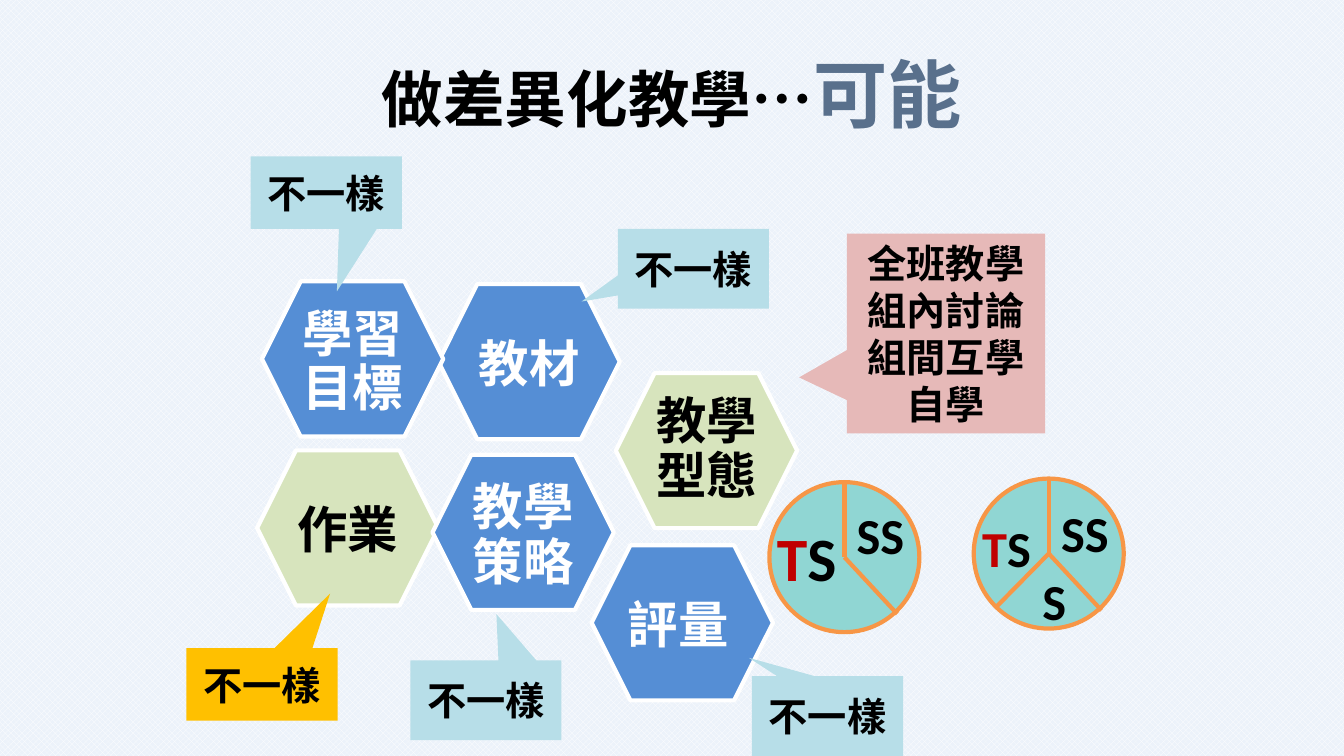
from dataclasses import dataclass

from lxml.etree import SubElement
from pptx import Presentation
from pptx.dml.color import RGBColor
from pptx.enum.dml import MSO_PATTERN
from pptx.enum.shapes import MSO_CONNECTOR, MSO_SHAPE
from pptx.enum.text import MSO_ANCHOR, MSO_AUTO_SIZE, PP_ALIGN
from pptx.oxml.ns import qn
from pptx.util import Cm, Pt

CJK = "Noto Sans CJK SC"
LATIN = "Calibri"
COLORS = {
    "white": "FFFFFF", "black": "000000", "backdrop": "ECF2FA", "slate": "59708C",
    "blue": "558ED5", "green": "D7E4BD", "pink": "E6B9B8", "sky": "B7DEE8",
    "amber": "FFC000", "teal": "90D6D3", "orange": "F79646", "red": "C00000",
}
SLIDE_W, SLIDE_H = 33.87, 19.05
HEX_W, HEX_H = 4.57, 3.91
PIE_R = 1.89


@dataclass
class Hexagon:
    text: str
    x: float
    y: float
    fill: str = "blue"
    color: str = "white"
    dx: float = 0.71
    dy: float = 0.71


@dataclass
class Callout:
    x: float
    y: float
    h: float
    tail: tuple[float, float]
    fill: str = "sky"
    w: float = 3.81
    text: str = "不一樣"


@dataclass
class Label:
    """Pie label, placed relative to the centre of the pie."""
    runs: list[tuple[str, str]]
    dx: float
    dy: float
    w: float = 1.73
    h: float = 1.8
    size: int = 36


@dataclass
class Pie:
    cx: float
    cy: float
    spokes: list[tuple[float, float]]
    labels: list[Label]


TEACHER = [("T", "red"), ("S", "black")]
STUDENTS = [("SS", "black")]

HEXAGONS = [
    Hexagon("教材", 11.05, 7.16),
    Hexagon("作業", 6.48, 11.35, "green", "black"),
    Hexagon("教學策略", 10.9, 11.46),
    Hexagon("學習目標", 6.6, 7.09),
    Hexagon("教學型態", 15.52, 9.4, "green", "black", dy=0.61),
    Hexagon("評量", 14.91, 13.74, dx=0.61),
]
CALLOUTS = [
    Callout(21.34, 5.89, 5.03, (-0.74, 0.22), "pink", 5.0,
            "全班教學\n組內討論\n組間互學\n自學"),
    Callout(15.57, 5.77, 2.01, (-0.74, 0.41)),
    Callout(4.7, 16.33, 1.83, (0.45, -1.25), "amber"),
    Callout(6.32, 3.94, 1.83, (0.07, 1.36)),
    Callout(10.34, 16.64, 2.01, (0.07, -1.08)),
    Callout(18.95, 17.04, 2.01, (-0.52, -0.73)),
]
PIES = [
    Pie(21.28, 14.04, [(0, -PIE_R), (1.33, 1.43)],
        [Label(TEACHER, -1.95, -1.07, 2.01, 2.13, 44),
         Label(STUDENTS, 0.06, -1.45)]),
    Pie(26.43, 13.95, [(0, -PIE_R), (1.33, 1.43), (-1.33, 1.35)],
        [Label(TEACHER, -1.93, -1.04),
         Label(STUDENTS, 0.06, -1.43),
         Label([("S", "black")], -0.41, 0.28, 1.12)]),
]


def rgb(name: str) -> RGBColor:
    return RGBColor.from_string(COLORS[name])


def add_text(p, text: str, *, size: float, color: str = "black", font: str = CJK) -> None:
    r = p.add_run()
    r.text = text
    f = r.font
    f.size, f.bold, f.name = Pt(size), True, font
    f.color.rgb = rgb(color)
    SubElement(r._r.get_or_add_rPr(), qn("a:ea")).set("typeface", font)


def add_shape(shapes, kind, x: float, y: float, w: float, h: float,
              fill: str, line: str | None = None):
    s = shapes.add_shape(kind, Cm(x), Cm(y), Cm(w), Cm(h))
    s.shadow.inherit = False
    s.fill.solid()
    s.fill.fore_color.rgb = rgb(fill)
    if line:
        s.line.color.rgb = rgb(line)
        s.line.width = Pt(3)
    else:
        s.line.fill.background()
    return s


def add_box(shapes, x: float, y: float, w: float, h: float, wrap: bool = True):
    tf = shapes.add_textbox(Cm(x), Cm(y), Cm(w), Cm(h)).text_frame
    tf.word_wrap = wrap
    if wrap:
        tf.vertical_anchor = MSO_ANCHOR.MIDDLE
        tf.paragraphs[0].alignment = PP_ALIGN.CENTER
    else:
        tf.auto_size = MSO_AUTO_SIZE.SHAPE_TO_FIT_TEXT
    return tf


def draw_backdrop(shapes) -> None:
    s = add_shape(shapes, MSO_SHAPE.RECTANGLE, 0, 0, SLIDE_W, SLIDE_H, "backdrop")
    s.fill.patterned()
    s.fill.pattern = MSO_PATTERN.SOLID_DIAMOND
    s.fill.fore_color.rgb = rgb("white")
    s.fill.back_color.rgb = rgb("backdrop")


def draw_title(shapes) -> None:
    p = add_box(shapes, 4.23, 0.74, 25.4, 3.18).paragraphs[0]
    add_text(p, "做差異化教學…", size=44)
    add_text(p, "可能", size=53, color="slate")


def draw_hexagon(shapes, hexagon: Hexagon) -> None:
    add_shape(shapes, MSO_SHAPE.HEXAGON, hexagon.x, hexagon.y, HEX_W, HEX_H,
              hexagon.fill, "white")
    tf = add_box(shapes, hexagon.x + hexagon.dx, hexagon.y + hexagon.dy, 3.15, 2.7)
    tf.margin_left = tf.margin_right = 0
    tf.margin_top = tf.margin_bottom = Cm(0.1)
    p = tf.paragraphs[0]
    p.line_spacing = 0.9
    p.space_after = Pt(12.6)
    add_text(p, hexagon.text, size=36, color=hexagon.color)


def draw_callout(shapes, callout: Callout) -> None:
    s = add_shape(shapes, MSO_SHAPE.RECTANGULAR_CALLOUT, callout.x, callout.y,
                  callout.w, callout.h, callout.fill)
    s.adjustments[0], s.adjustments[1] = callout.tail
    tf = s.text_frame
    tf.word_wrap = True
    tf.vertical_anchor = MSO_ANCHOR.MIDDLE
    for i, text in enumerate(callout.text.split("\n")):
        p = tf.add_paragraph() if i else tf.paragraphs[0]
        p.alignment = PP_ALIGN.CENTER
        add_text(p, text, size=28)


def draw_pie(shapes, pie: Pie) -> None:
    group = shapes.add_group_shape().shapes
    add_shape(group, MSO_SHAPE.OVAL, pie.cx - PIE_R, pie.cy - PIE_R,
              2 * PIE_R, 2 * PIE_R, "teal", "orange")
    for dx, dy in pie.spokes:
        c = group.add_connector(MSO_CONNECTOR.STRAIGHT, Cm(pie.cx), Cm(pie.cy),
                                Cm(pie.cx + dx), Cm(pie.cy + dy))
        c.line.color.rgb = rgb("orange")
        c.line.width = Pt(3)
        SubElement(c._element.spPr, qn("a:effectLst"))
    for label in pie.labels:
        tf = add_box(group, pie.cx + label.dx, pie.cy + label.dy,
                     label.w, label.h, wrap=False)
        for text, color in label.runs:
            add_text(tf.paragraphs[0], text, size=label.size, color=color, font=LATIN)


def main() -> None:
    prs = Presentation()
    prs.slide_width, prs.slide_height = Cm(SLIDE_W), Cm(SLIDE_H)
    shapes = prs.slides.add_slide(prs.slide_layouts[6]).shapes
    draw_backdrop(shapes)
    draw_title(shapes)
    for hexagon in HEXAGONS:
        draw_hexagon(shapes, hexagon)
    for callout in CALLOUTS:
        draw_callout(shapes, callout)
    for pie in PIES:
        draw_pie(shapes, pie)
    prs.save("out.pptx")


if __name__ == "__main__":
    main()
